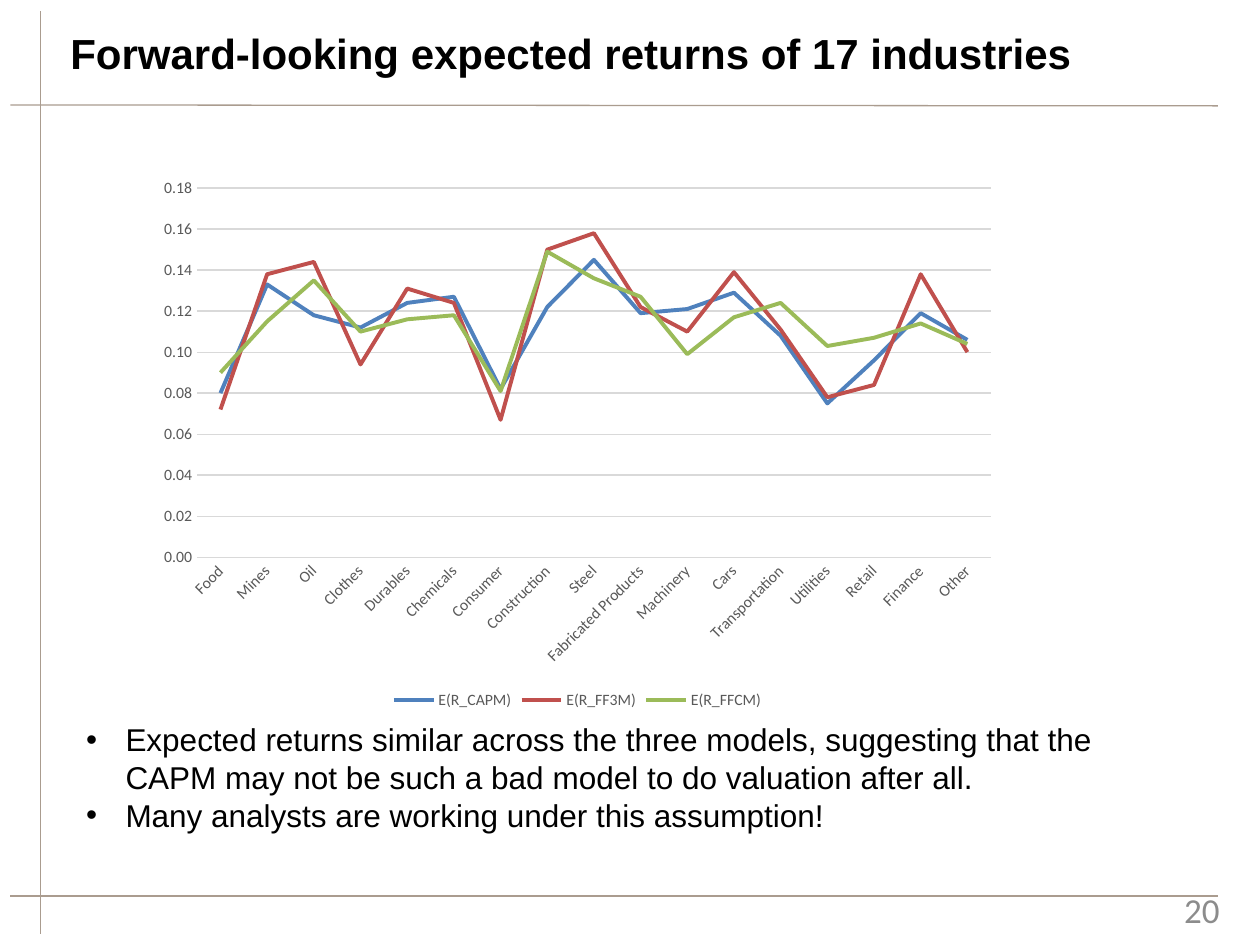
from dataclasses import dataclass

from lxml import etree
from pptx import Presentation
from pptx import util as u
from pptx.chart import data as cd
from pptx.dml.color import RGBColor
from pptx.enum import chart as ch
from pptx.enum import shapes, text
from pptx.oxml import ns


@dataclass(frozen=True)
class Theme:
    sans: str = "Arial"
    chart_font: str = "Calibri"
    ink: str = "000000"
    rule: str = "AA9C8F"
    number: str = "8C8C8C"
    label: str = "595959"
    grid: str = "D9D9D9"
    title_pt: float = 24
    body_pt: float = 18
    number_pt: float = 20
    label_pt: float = 9
    hair_pt: float = 0.75
    series_pt: float = 2.25


@dataclass(frozen=True)
class Box:
    x: float
    y: float
    w: float
    h: float

    def emu(self) -> tuple:
        return tuple(u.Pt(v) for v in (self.x, self.y, self.w, self.h))


@dataclass(frozen=True)
class Rule:
    x1: float
    y1: float
    x2: float
    y2: float


@dataclass(frozen=True)
class Series:
    name: str
    color: str
    values: tuple


T = Theme()

RULES = (
    Rule(23, 6.5, 23, 534),
    Rule(6, 60, 696, 60.5),
    Rule(6, 512, 696, 512),
)
INDUSTRIES = (
    "Food", "Mines", "Oil", "Clothes", "Durables", "Chemicals", "Consumer",
    "Construction", "Steel", "Fabricated Products", "Machinery", "Cars",
    "Transportation", "Utilities", "Retail", "Finance", "Other",
)
MODELS = (
    Series("E(R_CAPM)", "4F81BD", (
        0.08, 0.133, 0.118, 0.112, 0.124, 0.127, 0.082, 0.122, 0.145,
        0.119, 0.121, 0.129, 0.108, 0.075, 0.096, 0.119, 0.106)),
    Series("E(R_FF3M)", "C0504D", (
        0.072, 0.138, 0.144, 0.094, 0.131, 0.124, 0.067, 0.15, 0.158,
        0.122, 0.11, 0.139, 0.111, 0.078, 0.084, 0.138, 0.1)),
    Series("E(R_FFCM)", "9BBB59", (
        0.09, 0.115, 0.135, 0.11, 0.116, 0.118, 0.081, 0.149, 0.136,
        0.127, 0.099, 0.117, 0.124, 0.103, 0.107, 0.114, 0.104)),
)
POINTS = (
    "Expected returns similar across the three models, suggesting that the "
    "CAPM may not be such a bad model to do valuation after all.",
    "Many analysts are working under this assumption!",
)


def rgb(color: str) -> RGBColor:
    return RGBColor.from_string(color)


def set_font(font, name: str, size: float, color: str, bold: bool = False) -> None:
    font.name, font.size, font.bold = name, u.Pt(size), bold
    font.color.rgb = rgb(color)


def set_line(line, color: str, width: float) -> None:
    line.color.rgb = rgb(color)
    line.width = u.Pt(width)


def add_bullet(p, indent: float) -> None:
    pPr = p._p.get_or_add_pPr()
    pPr.set("marL", str(u.Pt(indent)))
    pPr.set("indent", str(-u.Pt(indent)))
    etree.SubElement(pPr, ns.qn("a:buFont")).set("typeface", T.sans)
    etree.SubElement(pPr, ns.qn("a:buChar")).set("char", "•")


def write(sp, box: Box, lines: tuple, *, font: str = T.sans, size: float,
          color: str = T.ink, bold: bool = False, bullet: float = 0,
          align=text.PP_ALIGN.LEFT, anchor=text.MSO_ANCHOR.TOP) -> None:
    sp.left, sp.top, sp.width, sp.height = box.emu()
    tf = sp.text_frame
    tf.word_wrap, tf.auto_size = True, text.MSO_AUTO_SIZE.NONE
    tf.vertical_anchor = anchor
    for i, line in enumerate(lines):
        p = tf.add_paragraph() if i else tf.paragraphs[0]
        p.alignment, p.space_before = align, u.Pt(0)
        if bullet:
            add_bullet(p, bullet)
        r = p.add_run()
        r.text = line
        set_font(r.font, font, size, color, bold)


def add_rule(s, rule: Rule) -> None:
    c = s.shapes.add_connector(
        shapes.MSO_CONNECTOR.STRAIGHT,
        u.Pt(rule.x1), u.Pt(rule.y1), u.Pt(rule.x2), u.Pt(rule.y2))
    set_line(c.line, T.rule, T.hair_pt)
    etree.SubElement(c._element.spPr, ns.qn("a:effectLst"))


def add_returns_chart(s, box: Box) -> None:
    data = cd.CategoryChartData(number_format="0.00")
    data.categories = INDUSTRIES
    for m in MODELS:
        data.add_series(m.name, m.values)
    chart = s.shapes.add_chart(ch.XL_CHART_TYPE.LINE, *box.emu(), data).chart
    set_font(chart.font, T.chart_font, 10, T.ink)
    chart.has_title = False
    chart.plots[0].vary_by_categories = False

    # Model lines
    for ser, m in zip(chart.plots[0].series, MODELS):
        ser.smooth = False
        ser.marker.style = ch.XL_MARKER_STYLE.NONE
        set_line(ser.format.line, m.color, T.series_pt)

    # Axes
    cat, val = chart.category_axis, chart.value_axis
    for axis in (cat, val):
        axis.major_tick_mark = axis.minor_tick_mark = ch.XL_TICK_MARK.NONE
        set_font(axis.tick_labels.font, T.chart_font, T.label_pt, T.label)
    set_line(cat.format.line, T.grid, T.hair_pt)
    cat._element.txPr.find(ns.qn("a:bodyPr")).set("rot", "-2700000")
    val.minimum_scale, val.maximum_scale, val.major_unit = 0, 0.18, 0.02
    val.tick_labels.number_format = "0.00"
    val.tick_labels.number_format_is_linked = False
    val.format.line.fill.background()
    val.has_major_gridlines = True
    set_line(val.major_gridlines.format.line, T.grid, T.hair_pt)

    # Legend
    chart.has_legend = True
    chart.legend.position = ch.XL_LEGEND_POSITION.BOTTOM
    chart.legend.include_in_layout = False
    set_font(chart.legend.font, T.chart_font, T.label_pt, T.label)


def main() -> None:
    prs = Presentation()
    prs.slide_width, prs.slide_height = u.Pt(720), u.Pt(540)
    s = prs.slides.add_slide(prs.slide_layouts[1])

    # Frame rules
    for rule in RULES:
        add_rule(s, rule)

    # Title, chart and conclusions
    write(s.shapes.title, Box(33, 12, 609, 36),
          ("Forward-looking expected returns of 17 industries",),
          size=T.title_pt, bold=True)
    add_returns_chart(s, Box(84, 96, 492, 312))
    write(s.placeholders[1], Box(42, 408, 618, 73), POINTS,
          size=T.body_pt, bullet=22.5)

    # Page number
    box = Box(536, 510, 168, 19)
    write(s.shapes.add_textbox(*box.emu()), box, ("20",), font=T.chart_font,
          size=T.number_pt, color=T.number, align=text.PP_ALIGN.RIGHT,
          anchor=text.MSO_ANCHOR.MIDDLE)

    prs.save("out.pptx")


if __name__ == "__main__":
    main()
